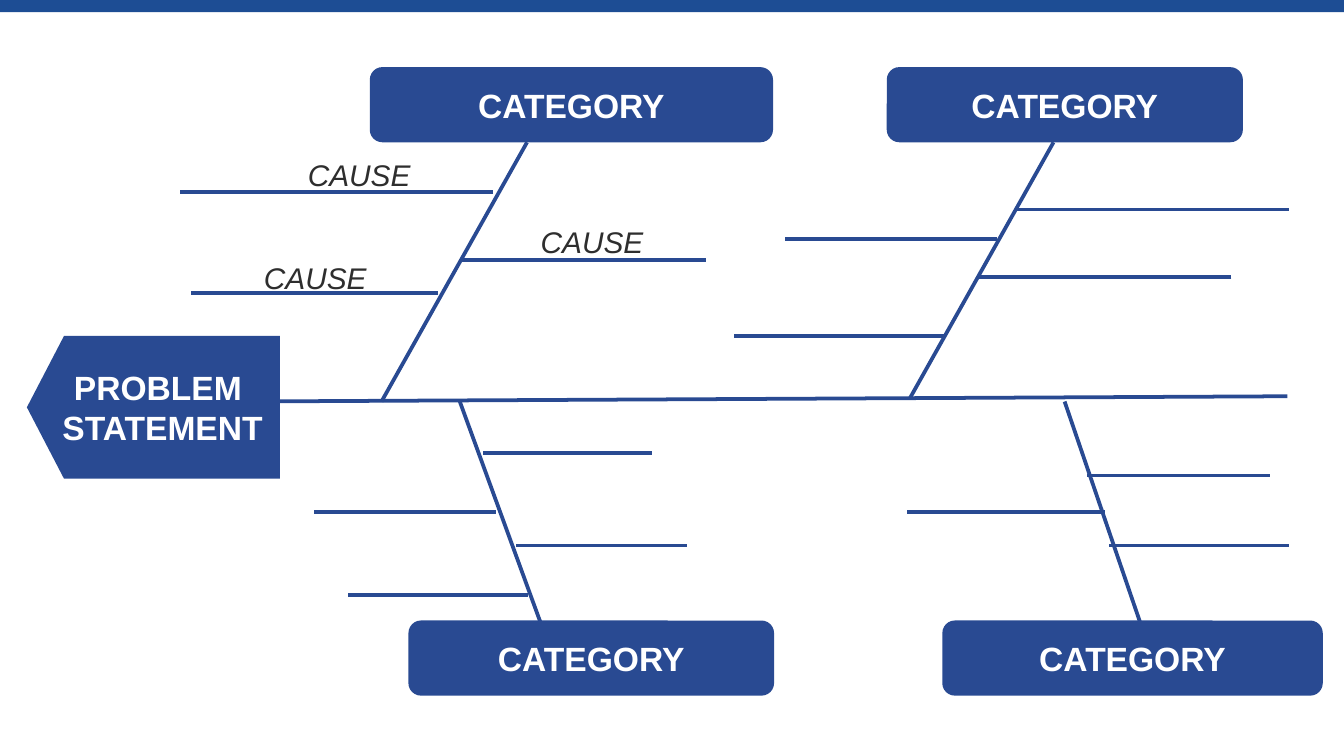
import pptx
import pptx.dml.color
import pptx.enum.shapes
import pptx.enum.text
import pptx.oxml
import pptx.util
from dataclasses import dataclass

Cm = pptx.util.Cm
Shapes = pptx.enum.shapes.MSO_SHAPE
Anchor = pptx.enum.text.MSO_ANCHOR


@dataclass(frozen=True)
class Theme:
    font: str = "Arial"
    banner: str = "1D4D94"
    blue: str = "294A92"
    white: str = "FFFFFF"
    ink: str = "2E2E2E"
    heading_size: int = 18
    cause_size: int = 16
    line_width: int = 2


theme = Theme()

SLIDE_SIZE = (25.4, 14.29)
BANNER_HEIGHT = 0.23
CATEGORY_HEIGHT = 1.42
CAUSE_SIZE = (8.1, 0.71)

categories = [
    ("CATEGORY", 6.99, 1.27, 7.62),
    ("CATEGORY", 16.76, 1.27, 6.73),
    ("CATEGORY", 7.72, 11.73, 6.91),
    ("CATEGORY", 17.81, 11.73, 7.19),
]
problem = (["PROBLEM ", "STATEMENT"], (0.51, 6.35, 4.78, 2.7))
spine = (24.33, 7.49, 4.45, 7.59)
bones = [
    (9.96, 2.69, 7.21, 7.59),
    (19.91, 2.69, 17.2, 7.52),
    (8.69, 7.59, 10.26, 11.89),
    (20.12, 7.59, 21.59, 11.89),
]
cause_lines = [
    (3.4, 9.32, 3.63),
    (8.69, 13.34, 4.92),
    (3.61, 8.28, 5.54),
    (19.18, 24.36, 3.96),
    (14.83, 18.85, 4.52),
    (18.47, 23.27, 5.23),
    (13.87, 17.88, 6.35),
    (9.12, 12.32, 8.56),
    (5.94, 9.37, 9.68),
    (9.75, 12.98, 10.31),
    (6.58, 9.98, 11.25),
    (20.55, 24, 8.99),
    (17.15, 20.88, 9.68),
    (20.96, 24.36, 10.31),
]
causes = [("CAUSE", 2.74, 2.84), ("CAUSE", 7.14, 4.11), ("CAUSE", 1.91, 4.78)]


def color(value):
    return pptx.dml.color.RGBColor.from_string(value)


def add_block(slide, kind, box, fill):
    shape = slide.shapes.add_shape(kind, *map(Cm, box))
    shape.shadow.inherit = False
    shape.fill.solid()
    shape.fill.fore_color.rgb = color(fill)
    shape.line.fill.background()
    return shape


def write(shape, lines, size, ink, anchor, bold=False, italic=False):
    frame = shape.text_frame
    frame.word_wrap = True
    frame.vertical_anchor = anchor
    for index, text in enumerate(lines):
        paragraph = frame.add_paragraph() if index else frame.paragraphs[0]
        paragraph.alignment = pptx.enum.text.PP_ALIGN.CENTER
        run = paragraph.add_run()
        run.text = text
        run.font.name = theme.font
        run.font.size = pptx.util.Pt(size)
        run.font.bold = bold
        run.font.italic = italic
        run.font.color.rgb = color(ink)


def write_heading(shape, lines):
    write(shape, lines, theme.heading_size, theme.white, Anchor.MIDDLE, bold=True)


def add_line(slide, ends):
    straight = pptx.enum.shapes.MSO_CONNECTOR.STRAIGHT
    connector = slide.shapes.add_connector(straight, *map(Cm, ends))
    connector.line.color.rgb = color(theme.blue)
    connector.line.width = pptx.util.Pt(theme.line_width)
    properties = connector._element.spPr
    properties.append(pptx.oxml.parse_xml(
        '<a:effectLst xmlns:a="http://schemas.openxmlformats.org/drawingml/2006/main"/>'))


def main():
    presentation = pptx.Presentation()
    presentation.slide_width, presentation.slide_height = map(Cm, SLIDE_SIZE)
    slide = presentation.slides.add_slide(presentation.slide_layouts[6])

    add_block(slide, Shapes.RECTANGLE, (0, 0, SLIDE_SIZE[0], BANNER_HEIGHT), theme.banner)

    for text, left, top, width in categories:
        box = (left, top, width, CATEGORY_HEIGHT)
        shape = add_block(slide, Shapes.ROUNDED_RECTANGLE, box, theme.blue)
        write_heading(shape, [text])

    twigs = [(right, y, left, y) for left, right, y in cause_lines]
    for ends in [spine, *bones, *twigs]:
        add_line(slide, ends)

    lines, box = problem
    head = add_block(slide, Shapes.PENTAGON, box, theme.blue)
    head.adjustments[0] = 0.26
    head._element.spPr.xfrm.set("flipH", "1")
    write_heading(head, lines)

    for text, left, top in causes:
        label = slide.shapes.add_textbox(*map(Cm, (left, top, *CAUSE_SIZE)))
        write(label, [text], theme.cause_size, theme.ink, Anchor.TOP, italic=True)

    presentation.save("out.pptx")


if __name__ == "__main__":
    main()
